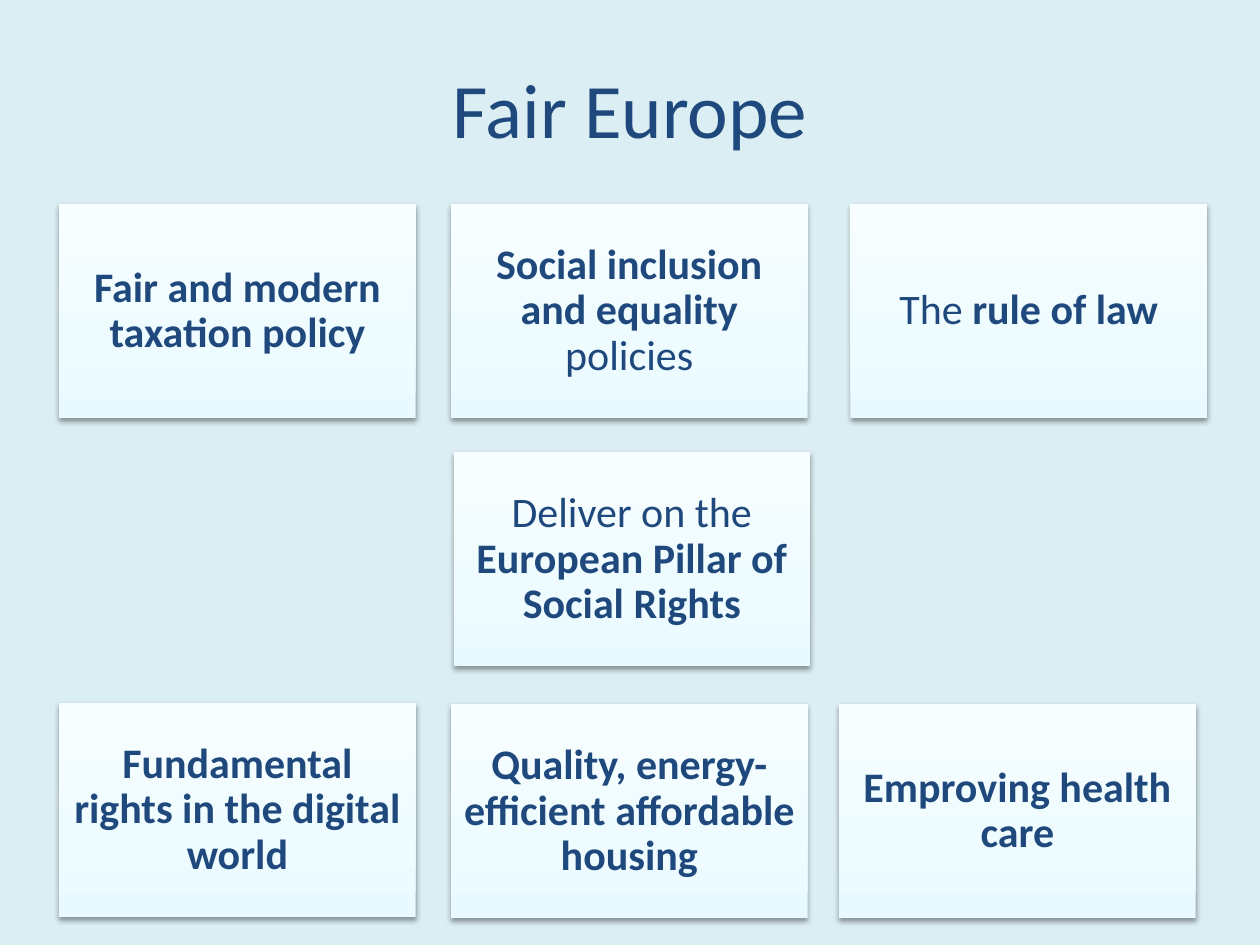
from lxml import etree
from pptx import Presentation
from pptx.dml.color import RGBColor
from pptx.enum.shapes import MSO_SHAPE as Shape
from pptx.enum.text import MSO_ANCHOR as Anchor, PP_ALIGN as Align
from pptx.oxml import parse_xml
from pptx.oxml.ns import nsdecls, qn
from pptx.util import Inches, Pt

# Content: each card is left, top and runs of (text, bold)
TITLE = "Fair Europe"
CARDS = [
    (0.47, 1.62, [("Fair and modern taxation policy", True)]),
    (3.58, 1.62, [("Social inclusion and equality ", True), ("policies", False)]),
    (6.75, 1.62, [("The ", False), ("rule of law", True)]),
    (3.6, 3.59, [("Deliver on the ", False),
                 ("European Pillar of Social Rights", True)]),
    (0.47, 5.58, [("Fundamental rights in the digital world", True)]),
    (3.58, 5.59, [("Quality, energy-efficient affordable housing", True)]),
    (6.66, 5.59, [("Emproving health care", True)]),
]

# Style
FONT = "Calibri"
NAVY = RGBColor(0x1F, 0x49, 0x7D)
PALE = RGBColor(0xDB, 0xEE, 0xF3)
STOPS = [(0, "E8FAFF"), (35, "EEFBFF"), (100, "F8FEFF")]
WIDTH, HEIGHT, INSET = 2.83, 1.7, 0.1


def add_text(frame, runs, size):
    frame.word_wrap = True
    frame.vertical_anchor = Anchor.MIDDLE
    para = frame.paragraphs[0]
    para.alignment = Align.CENTER
    for text, bold in runs:
        run = para.add_run()
        run.text = text
        font = run.font
        font.name, font.size, font.bold = FONT, Pt(size), bold
        font.color.rgb = NAVY
    return para


def add_glow(card):
    """Give the card its upward gradient and soft shadow."""
    stops = "".join(f'<a:gs pos="{pos * 1000}"><a:srgbClr val="{tint}"/></a:gs>'
                    for pos, tint in STOPS)
    grad = parse_xml(f'<a:gradFill {nsdecls("a")} rotWithShape="1">'
                     f'<a:gsLst>{stops}</a:gsLst>'
                     '<a:lin ang="16200000" scaled="0"/></a:gradFill>')
    props = card.element.spPr
    props.find(qn("a:prstGeom")).addnext(grad)
    card.shadow.inherit = False
    shade = etree.SubElement(props.find(qn("a:effectLst")), qn("a:outerShdw"),
                             blurRad=str(Pt(3.1)), dist=str(Pt(1.6)),
                             dir="5400000", rotWithShape="0")
    black = etree.SubElement(shade, qn("a:srgbClr"), val="000000")
    etree.SubElement(black, qn("a:alpha"), val="38000")


def add_card(slide, left, top, runs):
    card = slide.shapes.add_shape(Shape.RECTANGLE, Inches(left), Inches(top),
                                  Inches(WIDTH), Inches(HEIGHT))
    card.line.fill.background()
    add_glow(card)
    frame = card.text_frame
    frame.margin_left = frame.margin_right = Inches(INSET)
    frame.margin_top = frame.margin_bottom = Inches(INSET)
    add_text(frame, runs, 24).line_spacing = 0.9


def main():
    deck = Presentation()
    deck.slide_width, deck.slide_height = Inches(10), Inches(7.5)
    slide = deck.slides.add_slide(deck.slide_layouts[6])
    slide.background.fill.solid()
    slide.background.fill.fore_color.rgb = PALE

    # Title
    box = slide.shapes.add_textbox(Inches(0.5), Inches(0.23),
                                   Inches(9), Inches(1.25))
    add_text(box.text_frame, [(TITLE, False)], 44)

    # Cards
    for left, top, runs in CARDS:
        add_card(slide, left, top, runs)
    deck.save("out.pptx")


if __name__ == "__main__":
    main()
